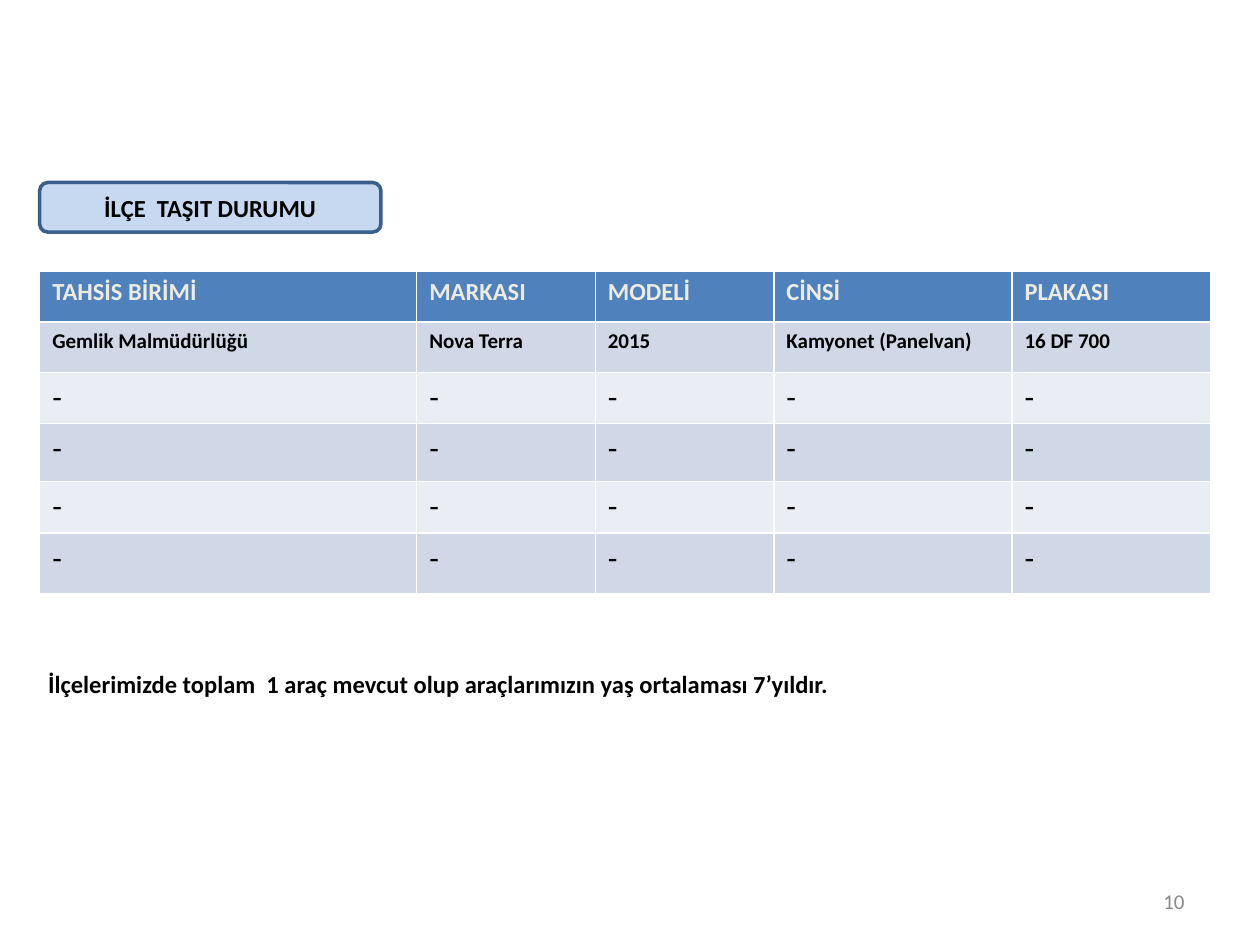
from dataclasses import dataclass

import pptx
import pptx.dml.color
import pptx.enum.shapes
import pptx.enum.text
import pptx.util
from pptx.util import Cm

ALIGN = pptx.enum.text.PP_ALIGN
ANCHOR = pptx.enum.text.MSO_ANCHOR
BLANK_LAYOUT = 6
BLACK = "000000"
HEADER_FILL = "4F81BD"
BAND_FILLS = ("D0D8E8", "E9EDF4")


@dataclass(frozen=True)
class Box:
    left: float
    top: float
    width: float
    height: float

    def lengths(self):
        return Cm(self.left), Cm(self.top), Cm(self.width), Cm(self.height)


@dataclass(frozen=True)
class Column:
    heading: str
    width: float
    vehicle: str


COLUMNS = (
    Column("TAHSİS BİRİMİ", 7.6, "Gemlik Malmüdürlüğü"),
    Column("MARKASI", 3.6, "Nova Terra"),
    Column("MODELİ", 3.6, "2015"),
    Column("CİNSİ", 4.8, "Kamyonet (Panelvan)"),
    Column("PLAKASI", 4, "16 DF 700"),
)
ROW_HEIGHTS = (1.02, 1.02, 1.02, 1.17, 1.02, 1.22)


def color(value: str):
    return pptx.dml.color.RGBColor.from_string(value)


def write(frame, text: str, *, size=14, hue=BLACK, bold=True,
          align=ALIGN.LEFT, anchor=ANCHOR.TOP):
    frame.word_wrap = True
    frame.vertical_anchor = anchor
    paragraph = frame.paragraphs[0]
    paragraph.alignment = align
    run = paragraph.add_run()
    run.text = text
    run.font.name = "Calibri"
    run.font.size = pptx.util.Pt(size)
    run.font.bold = bold
    run.font.color.rgb = color(hue)


def add_heading(slide, box: Box, text: str):
    shape = slide.shapes.add_shape(
        pptx.enum.shapes.MSO_SHAPE.ROUNDED_RECTANGLE, *box.lengths())
    shape.shadow.inherit = False
    shape.fill.solid()
    shape.fill.fore_color.rgb = color("C6D9F1")
    shape.line.color.rgb = color("3A5F8C")
    shape.line.width = pptx.util.Pt(2)
    write(shape.text_frame, text, align=ALIGN.CENTER, anchor=ANCHOR.MIDDLE)


def add_text(slide, box: Box, text: str, **text_format):
    write(slide.shapes.add_textbox(*box.lengths()).text_frame, text, **text_format)


def fill_cell(cell, text: str, fill: str, **text_format):
    cell.fill.solid()
    cell.fill.fore_color.rgb = color(fill)
    write(cell.text_frame, text, **text_format)


def add_vehicle_table(slide, left: float, top: float):
    """The default table style supplies the white cell borders."""
    box = Box(left, top, sum(column.width for column in COLUMNS), sum(ROW_HEIGHTS))
    table = slide.shapes.add_table(
        len(ROW_HEIGHTS), len(COLUMNS), *box.lengths()).table
    for row, height in zip(table.rows, ROW_HEIGHTS):
        row.height = Cm(height)
    for index, column in enumerate(COLUMNS):
        table.columns[index].width = Cm(column.width)
        fill_cell(table.cell(0, index), column.heading, HEADER_FILL, hue="EEECE1")
        fill_cell(table.cell(1, index), column.vehicle, BAND_FILLS[0], size=12)
        for row in range(2, len(ROW_HEIGHTS)):
            fill_cell(table.cell(row, index), "-", BAND_FILLS[(row - 1) % 2],
                      size=18, bold=False)


def main():
    presentation = pptx.Presentation()
    presentation.slide_width = Cm(25.4)
    presentation.slide_height = Cm(19.05)
    slide = presentation.slides.add_slide(presentation.slide_layouts[BLANK_LAYOUT])

    add_heading(slide, Box(0.8, 3.68, 6.88, 1), "İLÇE  TAŞIT DURUMU")
    add_vehicle_table(slide, 0.8, 5.47)
    add_text(slide, Box(0.72, 13.36, 23.42, 0.86),
             "İlçelerimizde toplam  1 araç mevcut olup araçlarımızın "
             "yaş ortalaması 7’yıldır.")
    add_text(slide, Box(18.2, 17.65, 5.93, 1.02), "10", size=12, hue="898989",
             bold=False, align=ALIGN.RIGHT, anchor=ANCHOR.MIDDLE)

    presentation.save("out.pptx")


if __name__ == "__main__":
    main()
